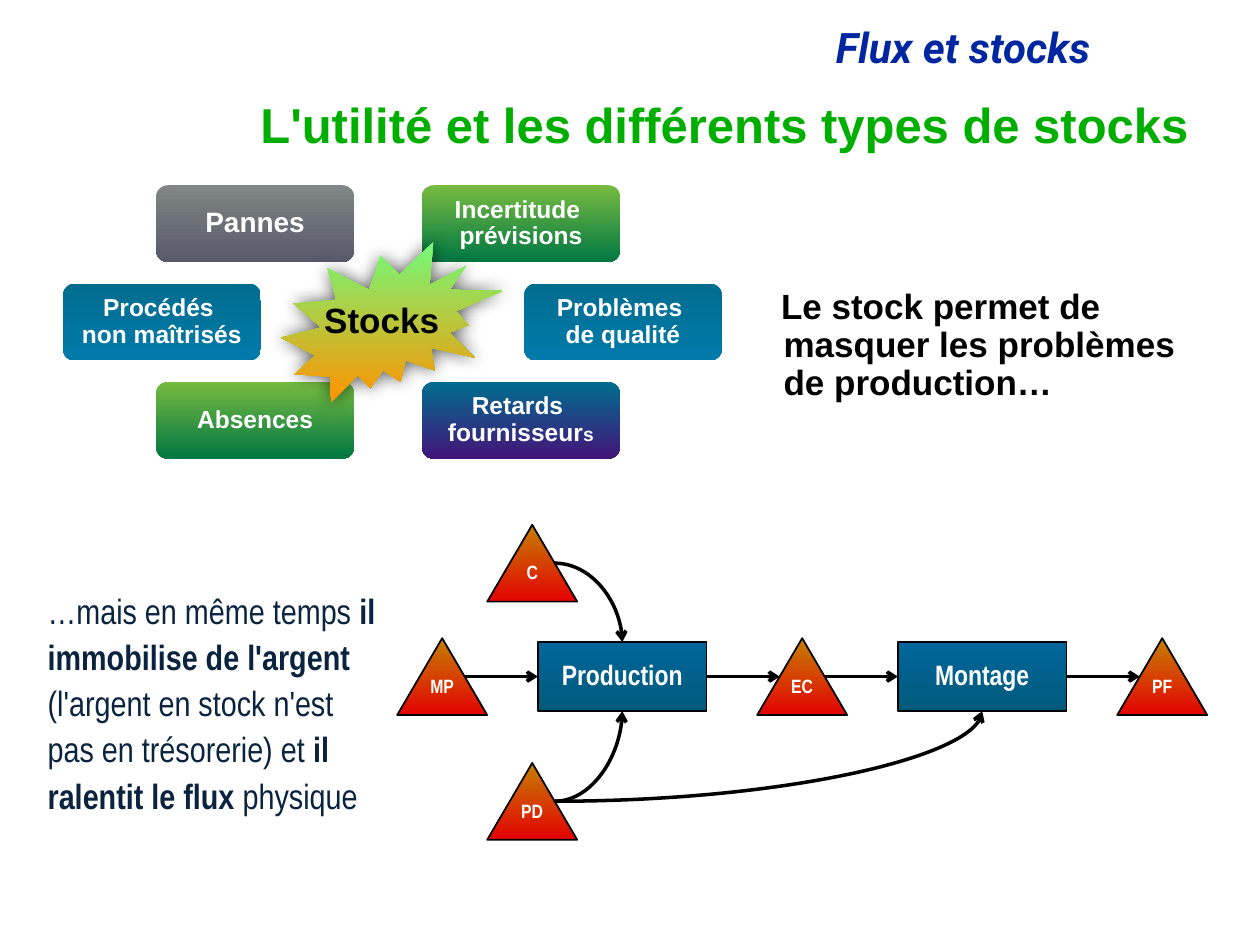
from lxml import etree
from pptx import Presentation
from pptx import util as u
from pptx.dml.color import RGBColor
from pptx.enum import shapes as sh, text as tx
from pptx.oxml.ns import qn

THEME = {
    "heading": "00279F", "title": "00AE00", "body": "0A233F",
    "black": "000000", "white": "FFFFFF",
    "grey": ("808785", "58596B"), "green": ("77BB41", "007742"),
    "blue": ("006D8F", "007AAA"), "violet": ("006D8F", "431579"),
    "burst": ("73FA79", "FF9300"), "stock": ("C68000", "E30202"),
    "step": ("006699", "005A7C"),
    "sans": "Arial", "narrow": "Arial Narrow", "display": "Roboto",
    "xl": 28, "lg": 24, "md": 20, "sm": 16, "xs": 14, "xxs": 11,
}

deck = Presentation()
deck.slide_width, deck.slide_height = u.Inches(10), u.Inches(7.5)
slide = deck.slides.add_slide(deck.slide_layouts[6])
canvas = slide.shapes


def write(shape, paragraphs, size="md", font="sans", color="white", bold=True,
          italic=False, align="CENTER", anchor="MIDDLE", margins=(0, 0), spacing=0.9):
    """Each paragraph is a list of (text, overrides) runs."""
    frame = shape.text_frame
    frame.word_wrap = True
    frame.vertical_anchor = tx.MSO_ANCHOR[anchor]
    frame.margin_left = frame.margin_right = u.Inches(margins[0])
    frame.margin_top = frame.margin_bottom = u.Inches(margins[1])
    for i, runs in enumerate(paragraphs):
        para = frame.paragraphs[0] if i == 0 else frame.add_paragraph()
        para.alignment = tx.PP_ALIGN[align]
        para.line_spacing = spacing
        for words, change in runs:
            run = para.add_run()
            run.text = words
            run.font.name = THEME[font]
            run.font.size = u.Pt(THEME[change.get("size", size)])
            run.font.bold = change.get("bold", bold)
            run.font.italic = italic
            run.font.color.rgb = RGBColor.from_string(THEME[color])


def paint(shape, gradient, outlined=False):
    shape.shadow.inherit = False
    shape.fill.gradient()
    shape.fill.gradient_angle = 270
    for stop, color in zip(shape.fill.gradient_stops, THEME[gradient]):
        stop.color.rgb = RGBColor.from_string(color)
    if outlined:
        shape.line.color.rgb = RGBColor.from_string(THEME["black"])
        shape.line.width = u.Pt(1)
    else:
        shape.line.fill.background()


# Headings
heading = canvas.add_textbox(*map(u.Inches, (1.17, 0.17, 7.58, 0.46)))
write(heading, [[("Flux et stocks", {})]], size="lg", font="display", color="heading",
      italic=True, align="RIGHT", anchor="TOP", margins=(0.1, 0.05))
title = canvas.add_textbox(*map(u.Inches, (1.61, 0.76, 7.92, 0.5)))
write(title, [[("L'utilité et les différents types de stocks", {})]], size="xl",
      color="title", align="RIGHT", margins=(0.1, 0.05))

# Problems hidden by the stocks
PROBLEM_TOP, PROBLEM_PITCH = 1.47, 0.78
problems = [
    (1.24, 0, "grey", "sm", [[("Pannes", {})]]),
    (0.5, 1, "blue", "xs", [[("Procédés ", {})], [("non maîtrisés", {})]]),
    (1.24, 2, "green", "xs", [[("Absences", {})]]),
    (3.35, 0, "green", "xs", [[("Incertitude ", {})], [("prévisions", {})]]),
    (4.16, 1, "blue", "xs", [[("Problèmes ", {})], [("de qualité", {})]]),
    (3.35, 2, "violet", "xs",
     [[("Retards ", {})], [("fournisseur", {}), ("s", {"size": "xxs"})]]),
]
for left, row, gradient, size, label in problems:
    problem = canvas.add_shape(
        sh.MSO_SHAPE.ROUNDED_RECTANGLE, u.Inches(left),
        u.Inches(PROBLEM_TOP + row * PROBLEM_PITCH), u.Inches(1.57), u.Inches(0.61))
    problem.adjustments[0] = 0.15
    paint(problem, gradient)
    write(problem, label, size=size)

# Central burst with its soft shadow
burst_points = [
    (3.17, 2.18), (3.44, 1.92), (3.41, 2.26), (3.7, 2.11), (3.57, 2.3), (3.99, 2.31),
    (3.62, 2.47), (3.72, 2.58), (3.57, 2.64), (3.77, 2.84), (3.42, 2.76), (3.45, 2.94),
    (3.22, 2.86), (3.18, 3.03), (3.04, 2.94), (2.94, 3.08), (2.84, 2.98), (2.63, 3.19),
    (2.62, 2.99), (2.34, 2.97), (2.5, 2.82), (2.23, 2.68), (2.55, 2.6), (2.33, 2.41),
    (2.67, 2.38), (2.6, 2.13), (2.93, 2.3), (3.02, 2.03),
]
outline = canvas.build_freeform(*map(u.Inches, burst_points[0]))
outline.add_line_segments([(u.Inches(x), u.Inches(y)) for x, y in burst_points[1:]])
burst = outline.convert_to_shape()
paint(burst, "burst")
effects = burst._element.spPr.find(qn("a:effectLst"))
glow = etree.SubElement(effects, qn("a:outerShdw"), blurRad=str(u.Pt(10)), dist="0",
                        dir="0", algn="ctr", rotWithShape="0")
shade = etree.SubElement(glow, qn("a:srgbClr"), val=THEME["black"])
etree.SubElement(shade, qn("a:alpha"), val="68000")
burst_label = canvas.add_textbox(*map(u.Inches, (2.41, 2.35, 1.24, 0.41)))
write(burst_label, [[("Stocks", {})]], color="black", margins=(0.04, 0.04))

# Flow grid: centres of columns and rows
COL = 10 / 14
cols = [3.51 + n * COL for n in range(9)]
SUPPLY, FLOW, PARTS = 4.47, 5.37, 6.36
TRI_W, TRI_H, STEP_W, STEP_H = COL, 0.61, 1.34, 0.55

# Stock triangles
for name, col, row in [("MP", 0, FLOW), ("C", 1, SUPPLY), ("EC", 4, FLOW),
                       ("PF", 8, FLOW), ("PD", 1, PARTS)]:
    stock = canvas.add_shape(
        sh.MSO_SHAPE.ISOSCELES_TRIANGLE, u.Inches(cols[col] - TRI_W / 2),
        u.Inches(row - TRI_H / 2), u.Inches(TRI_W), u.Inches(TRI_H))
    paint(stock, "stock", outlined=True)
    write(stock, [[(name, {})]], size="xxs", font="narrow", anchor="TOP")

# Process steps
steps = {}
for name, col in [("Production", 2), ("Montage", 6)]:
    step = canvas.add_shape(
        sh.MSO_SHAPE.RECTANGLE, u.Inches(cols[col] - STEP_W / 2),
        u.Inches(FLOW - STEP_H / 2), u.Inches(STEP_W), u.Inches(STEP_H))
    paint(step, "step", outlined=True)
    write(step, [[(name, {})]], size="sm", font="narrow", margins=(0.04, 0.05))
    steps[col] = step

# Flow arrows: column and row at each end, with the offset from the centre
EDGE, HALF, TOP = COL / 4, STEP_W / 2, STEP_H / 2
arrows = [
    ("STRAIGHT", 0, EDGE, FLOW, 2, -HALF, FLOW),
    ("STRAIGHT", 2, HALF, FLOW, 4, -EDGE, FLOW),
    ("STRAIGHT", 4, EDGE, FLOW, 6, -HALF, FLOW),
    ("STRAIGHT", 6, HALF, FLOW, 8, -EDGE, FLOW),
    ("CURVE", 1, EDGE, SUPPLY, 2, 0, FLOW - TOP),
    ("CURVE", 1, EDGE, PARTS, 2, 0, FLOW + TOP),
    ("CURVE", 1, EDGE, PARTS, 6, 0, FLOW + TOP),
]
for kind, start, start_dx, start_y, end, end_dx, end_y in arrows:
    arrow = canvas.add_connector(
        sh.MSO_CONNECTOR[kind], u.Inches(cols[start] + start_dx), u.Inches(start_y),
        u.Inches(cols[end] + end_dx), u.Inches(end_y))
    arrow.line.color.rgb = RGBColor.from_string(THEME["black"])
    arrow.line.width = u.Pt(2)
    props = arrow._element.spPr
    etree.SubElement(arrow.line._get_or_add_ln(), qn("a:tailEnd"), type="arrow")
    etree.SubElement(props, qn("a:effectLst"))
    if kind == "CURVE":
        props.find(qn("a:prstGeom")).set("prst", "curvedConnector2")
        continue
    if start in steps:
        arrow.begin_connect(steps[start], 3)
    if end in steps:
        arrow.end_connect(steps[end], 1)

# Comments on the stocks
drawback = canvas.add_textbox(*map(u.Inches, (0.28, 4.22, 2.83, 2.68)))
write(drawback, [[
    ("…mais en même temps ", {"bold": False}),
    ("il immobilise de l'argent ", {}),
    ("(l'argent en stock n'est pas en trésorerie) et ", {"bold": False}),
    ("il ralentit le flux", {}),
    (" physique", {"bold": False}),
]], font="narrow", color="body", align="LEFT", margins=(0.1, 0.05), spacing=1.1)

benefit = canvas.add_textbox(*map(u.Inches, (6.1, 2.25, 3.71, 1.1)))
write(benefit, [[("Le stock permet de masquer les problèmes de production…", {})]],
      color="black", align="LEFT", anchor="TOP", margins=(0.1, 0.05))
indent = benefit.text_frame.paragraphs[0]._p.get_or_add_pPr()
indent.set("marL", str(u.Inches(0.02)))
indent.set("indent", str(-u.Inches(0.02)))

deck.save("out.pptx")
